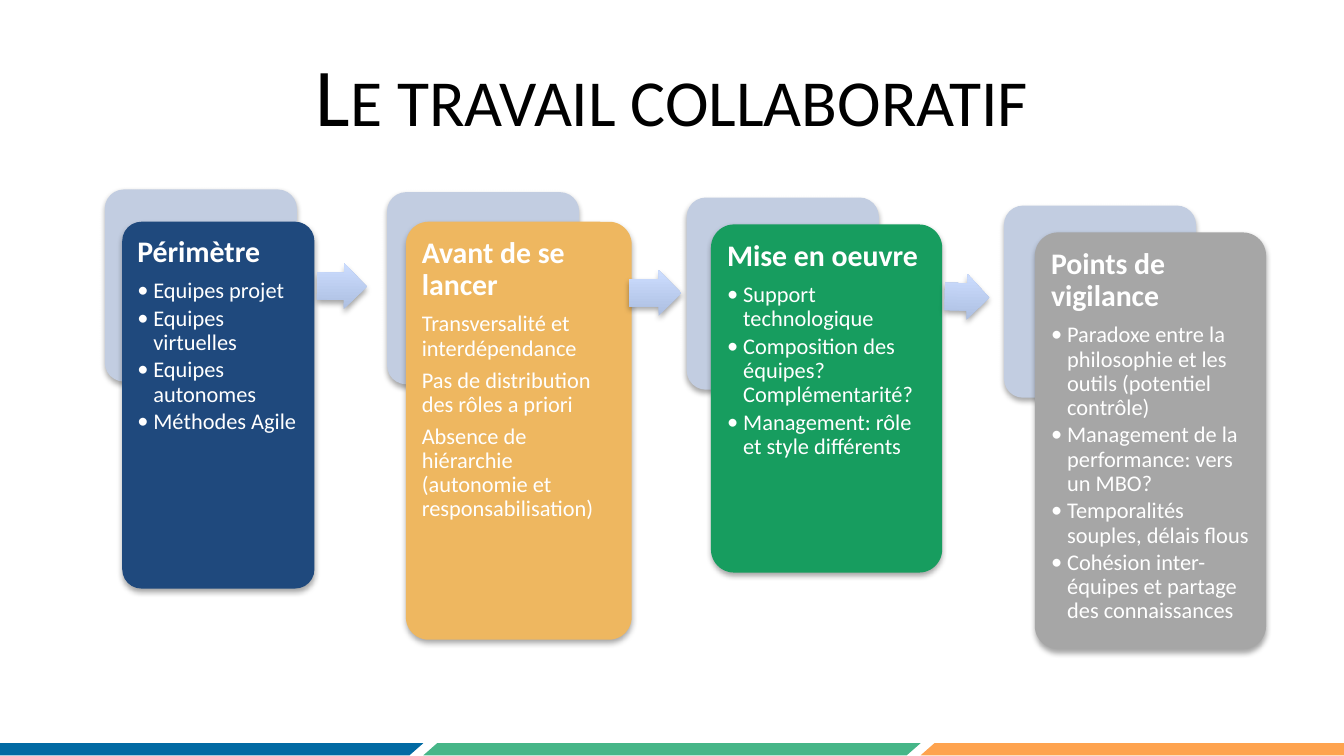
from lxml.etree import SubElement
from pptx import Presentation
from pptx.dml.color import RGBColor
from pptx.enum.shapes import MSO_SHAPE
from pptx.enum.text import MSO_ANCHOR, PP_ALIGN
from pptx.oxml.ns import qn
from pptx.util import Inches, Pt

FONT = "Calibri"
COLORS = {
    "text": "000000", "white": "FFFFFF", "back": "C2CDE1",
    "navy": "1F497D", "amber": "EEB760", "green": "179D5F", "grey": "A6A6A6",
    "arrow_start": "ADBFE1", "arrow_end": "CCDDFF",
    "band_blue": "016AA3", "band_green": "46B688", "band_orange": "FEA34F",
}
TITLE = "Le travail collaboratif"
BACK_SIZE = 1.43
CORNER = 0.1
STEPS = [
    {"heading": "Périmètre", "color": "navy", "bullets": True,
     "back": (0.78, 1.41), "card": (0.91, 1.65, 1.43, 2.73),
     "items": ["Equipes projet", "Equipes virtuelles", "Equipes autonomes",
               "Méthodes Agile"]},
    {"heading": "Avant de se lancer", "color": "amber", "bullets": False,
     "back": (2.88, 1.43), "card": (3.02, 1.65, 1.68, 3.11),
     "items": ["Transversalité et interdépendance",
               "Pas de distribution des rôles a priori",
               "Absence de hiérarchie (autonomie et responsabilisation)"]},
    {"heading": "Mise en oeuvre", "color": "green", "bullets": True,
     "back": (5.11, 1.47), "card": (5.29, 1.67, 1.72, 2.59),
     "items": ["Support technologique",
               "Composition des équipes? Complémentarité?",
               "Management: rôle et style différents"]},
    {"heading": "Points de vigilance", "color": "grey", "bullets": True,
     "back": (7.47, 1.53), "card": (7.7, 1.73, 1.72, 3.1),
     "items": ["Paradoxe entre la philosophie et les outils (potentiel contrôle)",
               "Management de la performance: vers un MBO?",
               "Temporalités souples, délais flous",
               "Cohésion inter-équipes et partage des connaissances"]},
]
ARROWS = [
    ((2.36, 1.96, 0.37, 0.34), 0.8),
    ((4.68, 2.01, 0.39, 0.34), 0),
    ((7.03, 2.04, 0.33, 0.34), 1.5),
]
BANDS = ["band_blue", "band_green", "band_orange"]
BAND_LEFT, BAND_TOP, BAND_WIDTH, BAND_HEIGHT = -0.55, 5.53, 3.7, 0.09


def rgb(name):
    return RGBColor.from_string(COLORS[name])


def add_block(slide, preset, box, adjustments, color=None):
    block = slide.shapes.add_shape(preset, *map(Inches, box))
    for index, value in enumerate(adjustments):
        block.adjustments[index] = value
    block.shadow.inherit = False
    block.line.fill.background()
    if color:
        block.fill.solid()
        block.fill.fore_color.rgb = rgb(color)
    return block


def add_soft_shadow(block):
    effects = block._element.spPr.find(qn("a:effectLst"))
    shadow = SubElement(effects, qn("a:outerShdw"), blurRad=str(Pt(3.1)),
                        dist=str(Pt(1.8)), dir="5400000", rotWithShape="0")
    tint = SubElement(shadow, qn("a:srgbClr"), val="000000")
    SubElement(tint, qn("a:alpha"), val="35000")


def format_paragraph(paragraph, text, size, bold, gap):
    paragraph.text = text
    paragraph.alignment = PP_ALIGN.LEFT
    paragraph.line_spacing = 0.9
    paragraph.space_after = Pt(size * gap)
    paragraph.font.name = FONT
    paragraph.font.size = Pt(size)
    paragraph.font.bold = bold
    paragraph.font.color.rgb = rgb("white")


def add_bullet(paragraph):
    paragraph.level = 1
    properties = paragraph._p.get_or_add_pPr()
    properties.set("marL", str(Inches(0.12)))
    properties.set("indent", str(-Inches(0.12)))
    for tag, attributes in (("a:buFont", {"typeface": FONT}),
                            ("a:buChar", {"char": "•"})):
        bullet = properties.makeelement(qn(tag), attributes)
        properties.insert_element_before(bullet, "a:tabLst", "a:defRPr", "a:extLst")


def add_step_text(slide, step):
    left, top, width, height = step["card"]
    inset = 0.29 * CORNER * min(width, height)
    content = slide.shapes.add_textbox(
        Inches(left + inset), Inches(top + inset),
        Inches(width - 2 * inset), Inches(height - 2 * inset))
    frame = content.text_frame
    frame.word_wrap = True
    frame.vertical_anchor = MSO_ANCHOR.TOP
    frame.margin_left = frame.margin_right = Inches(0.07)
    frame.margin_top = frame.margin_bottom = Inches(0.07)
    format_paragraph(frame.paragraphs[0], step["heading"], 16, True, 0.35)
    for item in step["items"]:
        paragraph = frame.add_paragraph()
        format_paragraph(paragraph, item, 12, False,
                         0.15 if step["bullets"] else 0.35)
        if step["bullets"]:
            add_bullet(paragraph)


def add_step(slide, step):
    back_box = (*step["back"], BACK_SIZE, BACK_SIZE)
    for box, color in ((back_box, "back"), (step["card"], step["color"])):
        panel = add_block(slide, MSO_SHAPE.ROUNDED_RECTANGLE, box, [CORNER], color)
        add_soft_shadow(panel)
    add_step_text(slide, step)


def add_arrow(slide, box, rotation):
    arrow = add_block(slide, MSO_SHAPE.RIGHT_ARROW, box, [0.6, 0.5])
    arrow.rotation = rotation
    arrow.fill.gradient()
    arrow.fill.gradient_angle = 90
    stops = zip(arrow.fill.gradient_stops, ("arrow_start", "arrow_end"))
    for position, (stop, name) in enumerate(stops):
        stop.color.rgb = rgb(name)
        stop.position = position
    add_soft_shadow(arrow)


def add_title(slide):
    title = slide.shapes.title
    title.left, title.top, title.width, title.height = map(
        Inches, (0.5, 0.23, 9, 0.94))
    title.text_frame.vertical_anchor = MSO_ANCHOR.MIDDLE
    paragraph = title.text_frame.paragraphs[0]
    paragraph.alignment = PP_ALIGN.CENTER
    run = paragraph.add_run()
    run.text = TITLE
    run.font.name = FONT
    run.font.size = Pt(44)
    run.font.color.rgb = rgb("text")
    run._r.get_or_add_rPr().set("cap", "small")


def main():
    deck = Presentation()
    deck.slide_width = Inches(10)
    deck.slide_height = deck.slide_width * 9 // 16
    slide = deck.slides.add_slide(deck.slide_layouts[5])
    add_title(slide)
    for index, color in enumerate(BANDS):
        left = BAND_LEFT + index * BAND_WIDTH
        add_block(slide, MSO_SHAPE.PARALLELOGRAM,
                  (left, BAND_TOP, BAND_WIDTH, BAND_HEIGHT), [1.14], color)
    for index, step in enumerate(STEPS):
        add_step(slide, step)
        if index < len(ARROWS):
            add_arrow(slide, *ARROWS[index])
    deck.save("out.pptx")


if __name__ == "__main__":
    main()
